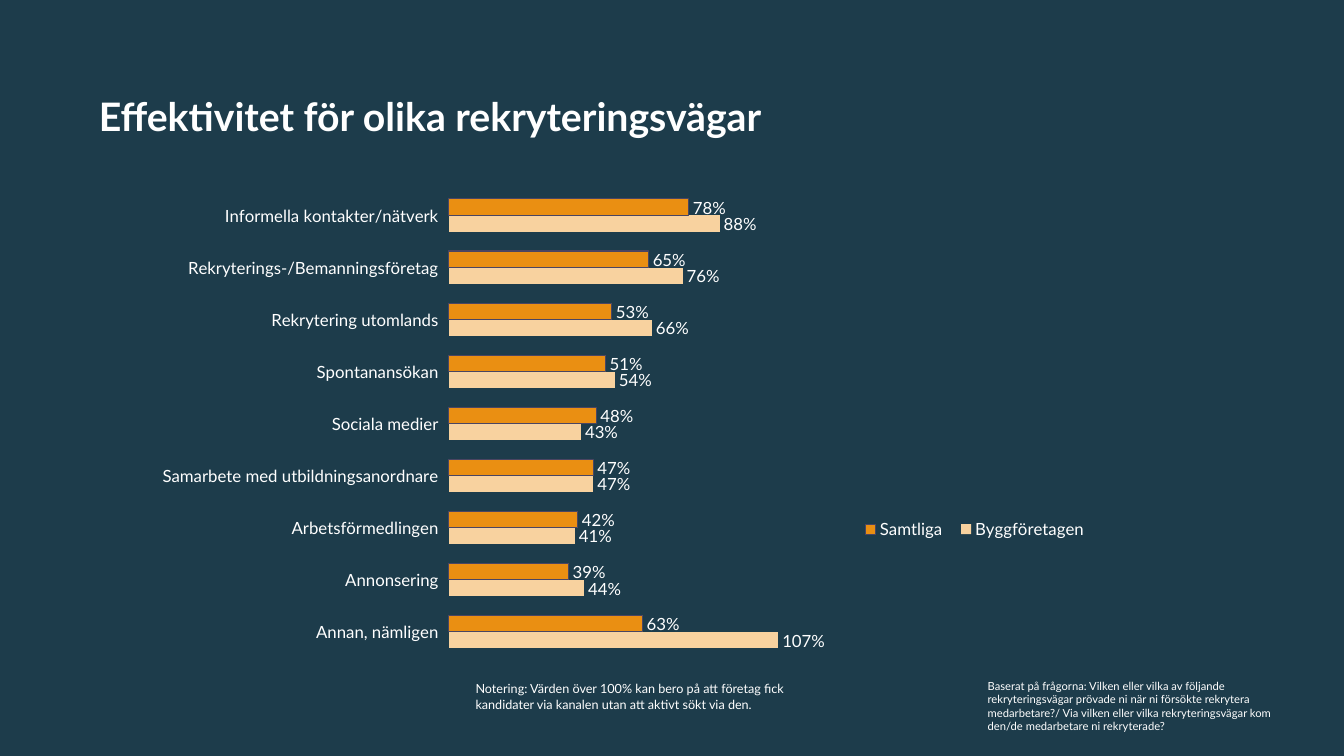
from collections import namedtuple
from dataclasses import dataclass

from lxml import etree
from pptx import Presentation
from pptx.chart.data import CategoryChartData
from pptx.dml.color import RGBColor
from pptx.enum.chart import XL_CHART_TYPE as ChartType
from pptx.enum.chart import XL_LABEL_POSITION as LabelPosition
from pptx.enum.chart import XL_LEGEND_POSITION as LegendPosition
from pptx.enum.chart import XL_TICK_LABEL_POSITION as TickLabels
from pptx.enum.chart import XL_TICK_MARK as TickMark
from pptx.enum.text import MSO_ANCHOR as Anchor
from pptx.enum.text import PP_ALIGN as Align
from pptx.oxml.ns import qn
from pptx.util import Pt

Box = namedtuple("Box", "left top width height")


@dataclass(frozen=True)
class Theme:
    font: str = "Lato"
    background: RGBColor = RGBColor(0x1D, 0x3C, 0x4B)
    text: RGBColor = RGBColor(0xFF, 0xFF, 0xFF)
    all_companies: RGBColor = RGBColor(0xEA, 0x8F, 0x12)
    builders: RGBColor = RGBColor(0xF8, 0xD2, 0x9F)
    bar_outline: RGBColor = RGBColor(0x4A, 0x45, 0x62)
    title_size: int = 28
    chart_size: int = 12
    note_size: int = 9
    source_size: int = 8


THEME = Theme()

# Channel, all companies, construction companies; listed from the bottom up
CHANNELS = [
    ("Annan, nämligen", 63, 107),
    ("Annonsering", 39, 44),
    ("Arbetsförmedlingen", 42, 41),
    ("Samarbete med utbildningsanordnare", 47, 47),
    ("Sociala medier", 48, 43),
    ("Spontanansökan", 51, 54),
    ("Rekrytering utomlands", 53, 66),
    ("Rekryterings-/Bemanningsföretag", 65, 76),
    ("Informella kontakter/nätverk", 78, 88),
]
NOTE = ("Notering: Värden över 100% kan bero på att företag fick kandidater "
        "via kanalen utan att aktivt sökt via den.")
SOURCE = ("Baserat på frågorna: Vilken eller vilka av följande rekryteringsvägar "
          "prövade ni när ni försökte rekrytera medarbetare?/ Via vilken eller "
          "vilka rekryteringsvägar kom den/de medarbetare ni rekryterade?")


def style_font(font, size, bold=False):
    font.name = THEME.font
    font.size = Pt(size)
    font.bold = bold
    font.color.rgb = THEME.text


def add_run(paragraph, text, size, bold=False):
    run = paragraph.add_run()
    run.text = text
    style_font(run.font, size, bold)


def set_layout(parent, position, fractions, inner=False):
    """Fix a chart part at x, y, w, h, given as fractions of the chart."""
    for old in parent.findall(qn("c:layout")):
        parent.remove(old)
    layout = etree.Element(qn("c:layout"))
    manual = etree.SubElement(layout, qn("c:manualLayout"))
    settings = [("layoutTarget", "inner")] if inner else []
    settings += [("xMode", "edge"), ("yMode", "edge")]
    settings += zip("xywh", fractions)
    for tag, value in settings:
        etree.SubElement(manual, qn(f"c:{tag}")).set("val", str(value))
    parent.insert(position, layout)


def add_title(slide, box, text):
    title = slide.shapes.title
    title.left, title.top, title.width, title.height = map(Pt, box)
    frame = title.text_frame
    frame.vertical_anchor = Anchor.MIDDLE
    paragraph = frame.paragraphs[0]
    paragraph.alignment = Align.LEFT
    paragraph.line_spacing = 0.9
    add_run(paragraph, text, THEME.title_size, bold=True)


def add_note(slide, box, text, size):
    frame = slide.shapes.add_textbox(*map(Pt, box)).text_frame
    frame.word_wrap = True
    add_run(frame.paragraphs[0], text, size)


def style_bars(series, color, outline=None):
    series.format.fill.solid()
    series.format.fill.fore_color.rgb = color
    if outline is None:
        series.format.line.fill.background()
    else:
        series.format.line.color.rgb = outline
        series.format.line.width = Pt(0.75)
    labels = series.data_labels
    labels.show_value = True
    labels.position = LabelPosition.OUTSIDE_END
    labels.number_format = r"##0\%"
    labels.number_format_is_linked = False
    style_font(labels.font, THEME.chart_size)


def add_channel_chart(slide, box):
    names, all_companies, builders = zip(*CHANNELS)
    data = CategoryChartData()
    data.categories = names
    data.add_series("Byggföretagen", builders)
    data.add_series("Samtliga", all_companies)
    chart = slide.shapes.add_chart(
        ChartType.BAR_CLUSTERED, *map(Pt, box), data).chart
    chart.has_title = False
    style_font(chart.font, THEME.chart_size)

    plot = chart.plots[0]
    plot.gap_width = 115
    plot.overlap = 0
    plot.vary_by_categories = False
    builder_bars, all_bars = plot.series
    style_bars(builder_bars, THEME.builders)
    style_bars(all_bars, THEME.all_companies, THEME.bar_outline)

    channels = chart.category_axis
    channels.major_tick_mark = TickMark.NONE
    channels.tick_label_position = TickLabels.LOW
    channels.format.line.fill.background()
    style_font(channels.tick_labels.font, THEME.chart_size)
    percent = chart.value_axis
    percent.minimum_scale, percent.maximum_scale = 0, 160
    percent.has_major_gridlines = False
    percent.visible = False

    chart.has_legend = True
    legend = chart.legend
    legend.position = LegendPosition.RIGHT
    legend.include_in_layout = False
    style_font(legend.font, THEME.chart_size)

    plot_area = chart.element.find(".//" + qn("c:plotArea"))
    set_layout(plot_area, 0, (0.307, 0.062, 0.504, 0.901), inner=True)
    legend_area = chart.element.find(".//" + qn("c:legend"))
    set_layout(legend_area, 1, (0.72, 0.68, 0.25, 0.07))


def add_channel_slide(deck):
    slide = deck.slides.add_slide(deck.slide_layouts[0])
    subtitle = slide.placeholders[1].element
    subtitle.getparent().remove(subtitle)
    slide.background.fill.solid()
    slide.background.fill.fore_color.rgb = THEME.background
    add_title(slide, Box(63.4, 56.9, 679, 55.4),
              "Effektivitet för olika rekryteringsvägar")
    add_channel_chart(slide, Box(105.8, 112.3, 699, 371.5))
    add_note(slide, Box(698.4, 481.7, 236, 56.9), SOURCE, THEME.source_size)
    add_note(slide, Box(332.6, 483.1, 236, 28.8), NOTE, THEME.note_size)


def main():
    deck = Presentation()
    deck.slide_width, deck.slide_height = Pt(960), Pt(540)
    add_channel_slide(deck)
    deck.save("out.pptx")


if __name__ == "__main__":
    main()
